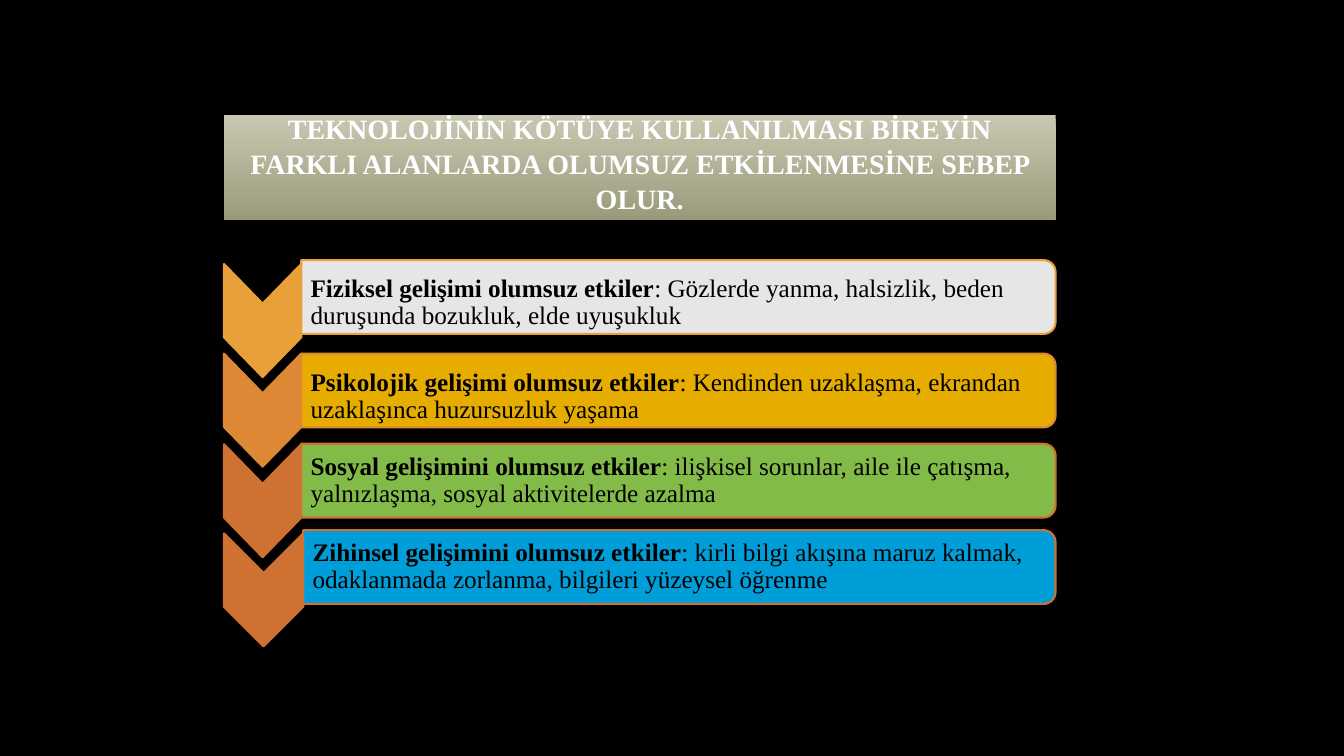
from math import cos, radians, sin

from lxml.etree import SubElement
from pptx import Presentation
from pptx.dml.color import RGBColor
from pptx.enum.text import MSO_ANCHOR as Anchor, MSO_AUTO_SIZE as AutoSize, PP_ALIGN as Align
from pptx.oxml.ns import qn
from pptx.util import Pt

ROWS = [
    (185.8, 188.6, 215.2, "E9A039", "FFFFFF", 11.6, "Fiziksel gelişimi olumsuz etkiler",
     ": Gözlerde yanma, halsizlik, beden duruşunda bozukluk, elde uyuşukluk"),
    (252.6, 252.6, 215.2, "DD8835", "FFC000", 11.6, "Psikolojik gelişimi olumsuz etkiler",
     ": Kendinden uzaklaşma, ekrandan uzaklaşınca huzursuzluk yaşama"),
    (317, 317.3, 215.2, "CF7133", "92D050", 3, "Sosyal gelişimini olumsuz etkiler",
     ": ilişkisel sorunlar, aile ile çatışma, yalnızlaşma, sosyal aktivitelerde azalma"),
    (378.7, 381, 216.6, "CF7133", "00B0F0", 3, "Zihinsel gelişimini olumsuz etkiler",
     ": kirli bilgi akışına maruz kalmak, odaklanmada zorlanma, bilgileri yüzeysel öğrenme"),
]
LEFT, RIGHT = 160, 754


def rgb(value):
    return RGBColor.from_string(value)


def add_run(p, text, size=18, color="000000", bold=False, font="Times New Roman"):
    r = p.add_run()
    r.text = text
    r.font.size, r.font.bold, r.font.name = Pt(size), bold, font
    r.font.color.rgb = rgb(color)
    return r


def add_alpha(parent, percent):
    SubElement(parent, qn("a:alpha"), val=str(percent * 1000))


class Deck:
    """Holds the presentation, the current slide and its style."""

    def __init__(self):
        self.prs = Presentation()
        self.prs.slide_width, self.prs.slide_height = Pt(960), Pt(540)
        self.s = self.prs.slides.add_slide(self.prs.slide_layouts[5])
        self.s.background.fill.solid()
        self.s.background.fill.fore_color.rgb = rgb("000000")

    def shadow(self, props):
        effects = SubElement(props, qn("a:effectLst"))
        outer = SubElement(effects, qn("a:outerShdw"), blurRad=str(Pt(4)),
                           dist=str(Pt(3)), dir="5400000")
        add_alpha(SubElement(outer, qn("a:srgbClr"), val="000000"), 60)
        return effects

    def title(self, text, x, y, w, h):
        sp = self.s.shapes.title
        sp.left, sp.top, sp.width, sp.height = Pt(x), Pt(y), Pt(w), Pt(h)
        sp.fill.gradient()
        sp.fill.gradient_angle = 270
        for stop, color in zip(sp.fill.gradient_stops, ("C8C8B2", "9A9A7B")):
            stop.color.rgb = rgb(color)
        for position, stop in enumerate(sp.fill.gradient_stops):
            stop.position = position
        self.shadow(sp._element.spPr)
        tf = sp.text_frame
        tf.auto_size, tf.word_wrap = AutoSize.NONE, True
        tf.vertical_anchor, tf.margin_top = Anchor.BOTTOM, 0
        p = tf.paragraphs[0]
        p.alignment, p.line_spacing = Align.CENTER, 1.04
        r = add_run(p, text, size=20, color="FFFFFF", bold=True)
        r.font._element.find(qn("a:solidFill")).addnext(self.shadow(r.font._element))

    def outline(self, points, fill, line):
        start, *rest = [(Pt(x), Pt(y)) for x, y in points]
        builder = self.s.shapes.build_freeform(*start)
        builder.add_line_segments(rest, close=True)
        sp = builder.convert_to_shape()
        sp.shadow.inherit = False
        sp.fill.solid()
        sp.fill.fore_color.rgb = rgb(fill)
        sp.line.color.rgb = rgb(line)
        sp.line.width = Pt(1.5)
        return sp

    def chevron(self, x, y, w, color, side=52.4, notch=28.3):
        right, mid = x + w, x + w / 2
        self.outline([(right, y), (right, y + side), (mid, y + side + notch),
                      (x, y + side), (x, y), (mid, y + notch)], color, color)

    def box(self, x, y, w, fill, line, pad, heading, detail, h=52.7, radius=8.6):
        cx = x + w - radius
        arc = [(radius * cos(radians(a)), radius * sin(radians(a))) for a in range(0, 91, 10)]
        top = [(cx + dx, y + radius - dy) for dx, dy in reversed(arc)]
        bottom = [(cx + dx, y + h - radius + dy) for dx, dy in arc]
        sp = self.outline([(x, y), *top, *bottom, (x, y + h)], fill, line)
        add_alpha(sp._element.spPr.find(qn("a:solidFill"))[0], 90)
        tf = sp.text_frame
        tf.word_wrap, tf.vertical_anchor = True, Anchor.MIDDLE
        tf.margin_left, tf.margin_top = Pt(6.7), Pt(pad)
        tf.margin_right = tf.margin_bottom = Pt(3)
        p = tf.paragraphs[0]
        p.alignment, p.line_spacing = Align.LEFT, 0.9
        add_run(p, heading, bold=True)
        add_run(p, detail)


def main():
    deck = Deck()
    deck.title("TEKNOLOJİNİN KÖTÜYE KULLANILMASI BİREYİN FARKLI ALANLARDA "
               "OLUMSUZ ETKİLENMESİNE SEBEP OLUR.", LEFT, 82.2, RIGHT - LEFT, 75)
    for box_top, chevron_top, box_left, accent, fill, pad, heading, detail in ROWS:
        deck.chevron(LEFT, chevron_top, box_left - LEFT, accent)
        deck.box(box_left, box_top, RIGHT - box_left, fill, accent, pad, heading, detail)
    deck.prs.save("out.pptx")


if __name__ == "__main__":
    main()
